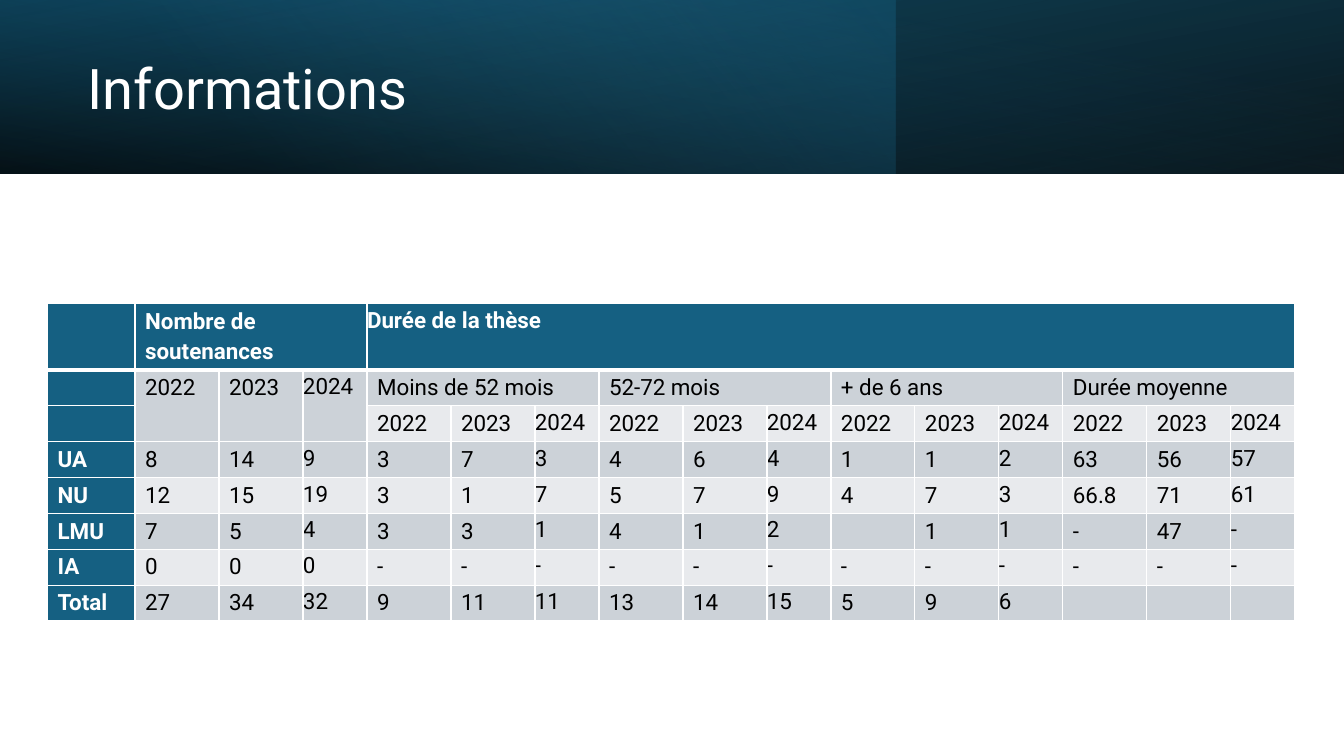
from dataclasses import dataclass

import pptx
import pptx.util
from lxml import etree
from pptx.dml.color import RGBColor
from pptx.enum.shapes import MSO_SHAPE
from pptx.enum.text import MSO_ANCHOR, MSO_AUTO_SIZE, PP_ALIGN
from pptx.oxml.ns import qn

Pt = pptx.util.Pt


@dataclass(frozen=True)
class Theme:
    font: str = "Roboto"
    title_size: int = 40
    table_size: int = 16
    white: str = "FFFFFF"
    black: str = "000000"
    blue: str = "156082"
    deep_blue: str = "104862"
    sky: str = "46B1E1"
    band_dark: str = "CCD2D8"
    band_light: str = "E8EAED"


THEME = Theme()
YEARS = ["2022", "2023", "2024"]
DURATIONS = ["Moins de 52 mois", "52-72 mois", "+ de 6 ans", "Durée moyenne"]
RESULTS = [
    ["UA", "8", "14", "9", "3", "7", "3", "4", "6", "4", "1", "1", "2", "63", "56", "57"],
    ["NU", "12", "15", "19", "3", "1", "7", "5", "7", "9", "4", "7", "3", "66.8", "71", "61"],
    ["LMU", "7", "5", "4", "3", "3", "1", "4", "1", "2", "", "1", "1", "-", "47", "-"],
    ["IA", "0", "0", "0"] + ["-"] * 12,
    ["Total", "27", "34", "32", "9", "11", "11", "13", "14", "15", "5", "9", "6", "", "", ""],
]


def style_text(p, size, color, bold=False):
    for r in p.runs:
        r.font.name = THEME.font
        r.font.size = Pt(size)
        r.font.bold = bold
        r.font.color.rgb = RGBColor.from_string(color)


def add_color(parent, color, alpha=100):
    clr = etree.SubElement(parent, qn("a:srgbClr"), val=color)
    if alpha < 100:
        etree.SubElement(clr, qn("a:alpha"), val=str(alpha * 1000))


def gradient_box(s, box, stops, angle, flip=False, rotation=0):
    """Add a rectangle whose stops are (position %, colour, opacity %)."""
    sp = s.shapes.add_shape(MSO_SHAPE.RECTANGLE, *map(Pt, box))
    sp.shadow.inherit = False
    sp.line.fill.background()
    sp.rotation = rotation
    if flip:
        sp._element.spPr.find(qn("a:xfrm")).set("flipH", "1")
    sp.fill.gradient()
    grad = sp._element.spPr.find(qn("a:gradFill"))
    for child in list(grad):
        grad.remove(child)
    stop_list = etree.SubElement(grad, qn("a:gsLst"))
    for position, color, alpha in stops:
        stop = etree.SubElement(stop_list, qn("a:gs"), pos=str(position * 1000))
        add_color(stop, color, alpha)
    etree.SubElement(grad, qn("a:lin"), ang=str(angle * 60000), scaled="0")


def title_band(s, box, text):
    x, y, w, h = box
    gradient_box(s, box, [(0, THEME.black, 96), (100, THEME.deep_blue, 100)],
                 100, flip=True, rotation=180)
    gradient_box(s, (x, y, w * 2 / 3, h), [(0, THEME.blue, 41), (74, THEME.sky, 0)], 140)
    gradient_box(s, box, [(0, THEME.black, 63), (78, THEME.blue, 15)], 260, flip=True)

    title = s.shapes.title
    title._element.getparent().append(title._element)  # bring in front of the band
    title.left, title.top = Pt(x + 55.5), Pt(y + 19.5)
    title.width, title.height = Pt(556), Pt(91.5)
    tf = title.text_frame
    tf.text = text
    tf.word_wrap = True
    tf.auto_size = MSO_AUTO_SIZE.NONE
    tf.vertical_anchor = MSO_ANCHOR.MIDDLE
    p = tf.paragraphs[0]
    p.alignment = PP_ALIGN.LEFT
    p.line_spacing = 0.9
    style_text(p, THEME.title_size, THEME.white)


def add_borders(cell, top, bottom):
    tc_pr = cell._tc.get_or_add_tcPr()
    for side, width in (("L", 1), ("R", 1), ("T", top), ("B", bottom)):
        ln = etree.SubElement(tc_pr, qn(f"a:ln{side}"), w=str(Pt(width)))
        add_color(etree.SubElement(ln, qn("a:solidFill")), THEME.white)


def format_cell(cell, row, col, text):
    add_borders(cell, 3 if row == 1 else 1, 3 if row == 0 else 1)
    is_head = row == 0 or col == 0
    band = THEME.band_dark if row % 2 else THEME.band_light
    cell.fill.solid()
    cell.fill.fore_color.rgb = RGBColor.from_string(THEME.blue if is_head else band)
    flush = (row, col) == (0, 4) or (row > 0 and col > 0 and col % 3 == 0)
    cell.margin_left = cell.margin_right = Pt(0 if flush else 7.2)
    cell.margin_top = Pt(0 if flush else 0.75)
    cell.margin_bottom = 0
    if text:
        cell.text = text
        p = cell.text_frame.paragraphs[0]
        p.line_spacing = 1.15
        p.space_after = Pt(8)
        style_text(p, THEME.table_size, THEME.white if is_head else THEME.black, is_head)


def thesis_table(s, box):
    groups = range(4, 16, 3)
    header = ["", "Nombre de soutenances", "", "", "Durée de la thèse"] + [""] * 11
    duration_row = ["", *YEARS]
    for duration in DURATIONS:
        duration_row += [duration, "", ""]
    rows = [header, duration_row, [""] * 4 + YEARS * len(DURATIONS), *RESULTS]

    tbl = s.shapes.add_table(len(rows), len(header), *map(Pt, box)).table
    for i, column in enumerate(tbl.columns):
        column.width = Pt(62.5 if i == 0 else 45.75 if i % 3 == 0 else 60)
    header_height = 47.25
    for i, row in enumerate(tbl.rows):
        row.height = Pt(header_height if i == 0 else (box[3] - header_height) / (len(rows) - 1))

    for i, texts in enumerate(rows):
        for j, text in enumerate(texts):
            format_cell(tbl.cell(i, j), i, j, text)

    tbl.cell(0, 1).merge(tbl.cell(0, 3))
    tbl.cell(0, 4).merge(tbl.cell(0, 15))
    for col in range(1, 4):
        tbl.cell(1, col).merge(tbl.cell(2, col))
    for col in groups:
        tbl.cell(1, col).merge(tbl.cell(1, col + 2))


def main():
    prs = pptx.Presentation()
    prs.slide_width, prs.slide_height = Pt(960), Pt(540)
    s = prs.slides.add_slide(prs.slide_layouts[5])
    title_band(s, (0, 0, 960, 124), "Informations")
    thesis_table(s, (34, 217, 891.25, 226.75))
    prs.save("out.pptx")


if __name__ == "__main__":
    main()
